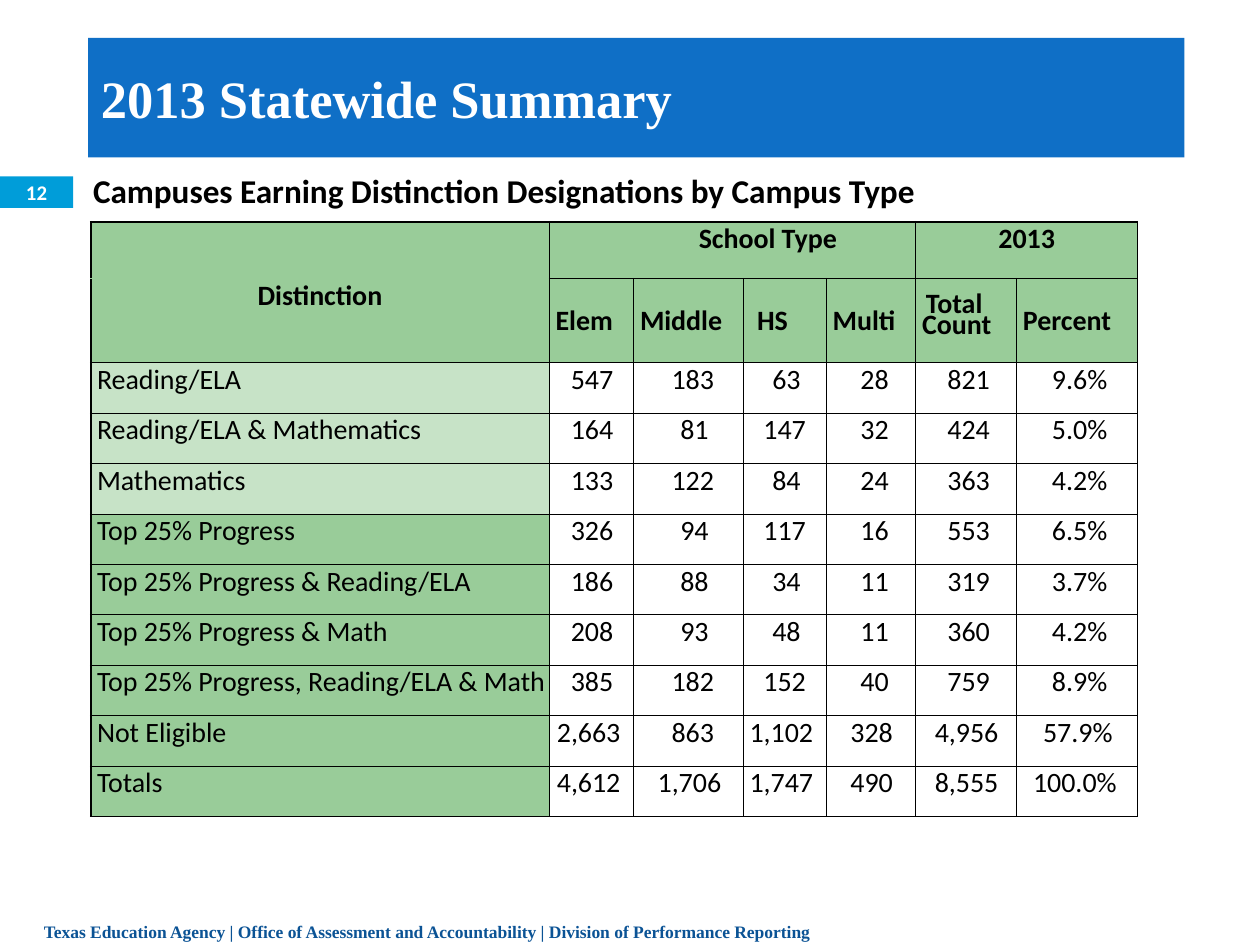
from dataclasses import dataclass
from lxml.etree import SubElement
from pptx import Presentation
from pptx.dml.color import RGBColor as RGB
from pptx.enum.shapes import MSO_SHAPE as SHAPE
from pptx.enum.text import MSO_ANCHOR as ANCHOR, MSO_AUTO_SIZE as FIT, PP_ALIGN as ALIGN
from pptx.oxml.ns import qn
from pptx.util import Inches, Pt


@dataclass(frozen=True)
class Theme:
    sans: str = "Calibri"
    serif: str = "Times New Roman"
    white: str = "FFFFFF"
    black: str = "000000"
    blue: str = "0F6FC6"
    cyan: str = "009DD9"
    navy: str = "0B5395"
    green: str = "99CC99"
    pale: str = "C7E3C7"
    title: float = 30
    subtitle: float = 19
    cell: float = 16
    number: float = 11.9
    footer: float = 10
    thin: float = 0.58
    thick: float = 1.06


T = Theme()

TITLE = "2013 Statewide Summary"
SUBTITLE = "Campuses Earning Distinction Designations by Campus Type"
FOOTER = ("Texas Education Agency | Office of Assessment and Accountability"
          " | Division of Performance Reporting")
NUMBER = "12"

GROUPS = [("School Type", 1, 4, 0.56), ("2013", 5, 6, 0)]
HEADINGS = ["Distinction", "Elem", "Middle", "HS", "Multi", "Total Count", "Percent"]
HEADING_INDENTS = [0, 0.05, 0.05, 0.11, 0.05, 0.05, 0.05]
ROWS = [
    ("Reading/ELA", "547", "183", "63", "28", "821", "9.6%"),
    ("Reading/ELA & Mathematics", "164", "81", "147", "32", "424", "5.0%"),
    ("Mathematics", "133", "122", "84", "24", "363", "4.2%"),
    ("Top 25% Progress", "326", "94", "117", "16", "553", "6.5%"),
    ("Top 25% Progress & Reading/ELA", "186", "88", "34", "11", "319", "3.7%"),
    ("Top 25% Progress & Math", "208", "93", "48", "11", "360", "4.2%"),
    ("Top 25% Progress, Reading/ELA & Math", "385", "182", "152", "40", "759", "8.9%"),
    ("Not Eligible", "2,663", "863", "1,102", "328", "4,956", "57.9%"),
    ("Totals", "4,612", "1,706", "1,747", "490", "8,555", "100.0%"),
]
PALE_ROWS = 3
VALUE_INDENTS = [
    {3: 0.17, 5: 0.06},
    {2: 0.37, 3: 0.3, 5: 0.19},
    {2: 0.23, 3: 0.16, 5: 0.05},
    {2: 0.27, 3: 0.19},
    {3: 0.25, 5: 0.15},
    {4: 0.28, 5: 0.21, 6: 0.13},
]
COL_WIDTHS = [3.64, 0.67, 0.87, 0.66, 0.71, 0.8, 0.96]
ROW_HEIGHTS = [0.45, 0.67] + [0.4] * len(ROWS)


def box(values):
    return [Inches(v) for v in values]


def write(tf, text, size, color, font=T.sans, bold=True, align=ALIGN.LEFT):
    p = tf.paragraphs[0]
    p.text = text
    p.alignment = align
    p.font.name, p.font.size, p.font.bold = font, Pt(size), bold
    p.font.color.rgb = RGB.from_string(color)
    return p


def paint(target, color):
    target.fill.solid()
    target.fill.fore_color.rgb = RGB.from_string(color)


def add_text(s, at, *args, **kwargs):
    sp = s.shapes.add_textbox(*box(at))
    sp.text_frame.word_wrap = True
    return sp, write(sp.text_frame, *args, **kwargs)


def set_borders(cell, row, col):
    last_row, last_col = len(ROW_HEIGHTS) - 1, len(COL_WIDTHS) - 1
    outer = {"L": col == 0, "R": col == last_col, "T": row == 0, "B": row == last_row}
    open_side = {0: "B", 1: "T"}.get(row) if col == 0 else None
    pr = cell._tc.get_or_add_tcPr()
    for side, is_outer in outer.items():
        width = Pt(T.thick if is_outer else T.thin)
        ln = SubElement(pr, qn(f"a:ln{side}"), w=str(width))
        fill = SubElement(ln, qn("a:solidFill"))
        SubElement(fill, qn("a:srgbClr"), val=T.green if side == open_side else T.black)


def fill_cell(cell, text, indent, bold=False, align=ALIGN.LEFT):
    p = write(cell.text_frame, text, T.cell, T.black, bold=bold, align=align)
    p._p.get_or_add_pPr().set("marL", str(Inches(indent)))
    return p


def add_summary_table(s):
    at = (0.72, 1.76, sum(COL_WIDTHS), sum(ROW_HEIGHTS))
    table = s.shapes.add_table(len(ROW_HEIGHTS), len(COL_WIDTHS), *box(at)).table
    table.first_row = table.horz_banding = False
    for column, width in zip(table.columns, COL_WIDTHS):
        column.width = Inches(width)
    for row, height in zip(table.rows, ROW_HEIGHTS):
        row.height = Inches(height)

    for r, row in enumerate(table.rows):
        for c, cell in enumerate(row.cells):
            cell.margin_left = cell.margin_right = cell.margin_top = cell.margin_bottom = 0
            set_borders(cell, r, c)
            if r < 2:
                paint(cell, T.green)
            elif c == 0:
                paint(cell, T.pale if r < 2 + PALE_ROWS else T.green)
            else:
                cell.fill.background()

    for text, first, last, indent in GROUPS:
        cell = table.cell(0, first)
        cell.merge(table.cell(0, last))
        fill_cell(cell, text, indent, True, ALIGN.CENTER)

    for c, (text, indent) in enumerate(zip(HEADINGS, HEADING_INDENTS)):
        cell = table.cell(1, c)
        p = fill_cell(cell, text, indent, True, ALIGN.LEFT if c else ALIGN.CENTER)
        cell.vertical_anchor = ANCHOR.MIDDLE if c else ANCHOR.TOP
        if text == "Total Count":
            p.line_spacing = Pt(12)
            p._p.get_or_add_pPr().set("indent", str(Inches(0.03)))

    for r, (label, *values) in enumerate(ROWS, 2):
        fill_cell(table.cell(r, 0), label, 0.05)
        for c, (value, indents) in enumerate(zip(values, VALUE_INDENTS), 1):
            fill_cell(table.cell(r, c), value, indents[len(value)])


def main():
    prs = Presentation()
    prs.slide_width, prs.slide_height = Inches(10), Inches(7.5)
    s = prs.slides.add_slide(prs.slide_layouts[5])

    title = s.shapes.title
    title.left, title.top, title.width, title.height = box((0.7, 0.3, 8.7, 0.95))
    paint(title, T.blue)
    write(title.text_frame, TITLE, T.title, T.white, T.serif)
    title.text_frame.vertical_anchor = ANCHOR.MIDDLE
    title.text_frame.auto_size = FIT.NONE

    tab = s.shapes.add_shape(SHAPE.RECTANGLE, *box((0, 1.4, 0.58, 0.25)))
    tab.shadow.inherit = False
    paint(tab, T.cyan)
    tab.line.fill.background()
    write(tab.text_frame, NUMBER, T.number, T.white, align=ALIGN.CENTER)
    tab.text_frame.vertical_anchor = ANCHOR.MIDDLE

    subtitle, _ = add_text(s, (0.64, 1.3, 9.36, 0.42), SUBTITLE, T.subtitle, T.black)
    paint(subtitle, T.white)
    _, p = add_text(s, (0.25, 7.07, 9, 0.41), FOOTER, T.footer, T.navy, T.serif)
    p.line_spacing = Pt(26)

    add_summary_table(s)
    prs.save("out.pptx")


if __name__ == "__main__":
    main()
